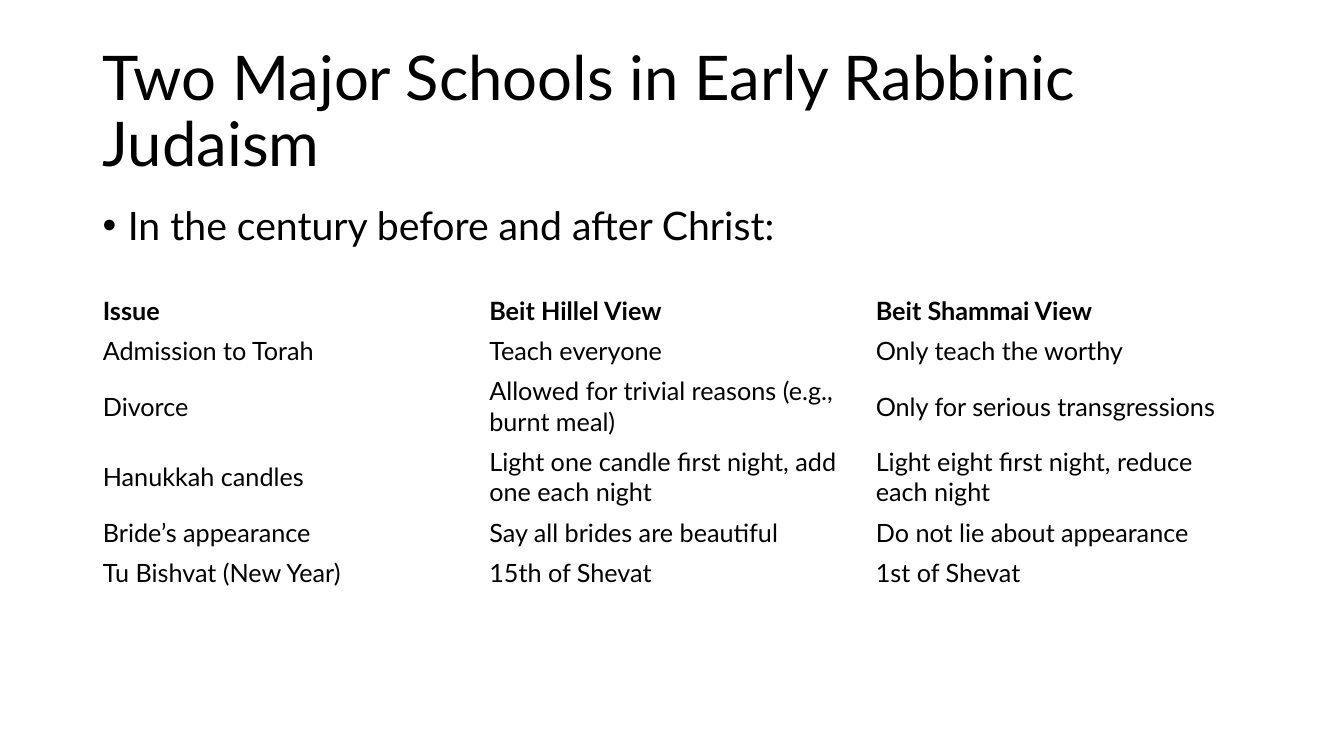
from lxml.etree import SubElement
from pptx import Presentation
from pptx.dml.color import RGBColor
from pptx.enum.text import MSO_ANCHOR
from pptx.oxml.ns import qn
from pptx.util import Inches, Pt

TITLE = "Two Major Schools in Early Rabbinic Judaism"
INTRO = "In the century before and after Christ:"
VIEWS = [
    ("Issue", "Beit Hillel View", "Beit Shammai View"),
    ("Admission to Torah", "Teach everyone", "Only teach the worthy"),
    ("Divorce", "Allowed for trivial reasons (e.g., burnt meal)",
     "Only for serious transgressions"),
    ("Hanukkah candles", "Light one candle first night, add one each night",
     "Light eight first night, reduce each night"),
    ("Bride’s appearance", "Say all brides are beautiful",
     "Do not lie about appearance"),
    ("Tu Bishvat (New Year)", "15th of Shevat", "1st of Shevat"),
]
ROW_HEIGHTS = [0.4, 0.4, 0.7, 0.7, 0.4, 0.4]
FONT, INK, PAPER = "Lato", "000000", "FFFFFF"
LEFT, WIDTH = 0.92, 11.5


def color(hex_code):
    return RGBColor.from_string(hex_code)


def style(paragraph, size, bold=False):
    font = paragraph.font
    font.name, font.size, font.bold = FONT, Pt(size), bold
    font.color.rgb = color(INK)


def add_text(slide, text, top, size, anchor):
    """Add a full-width text box and return its only paragraph."""
    box = slide.shapes.add_textbox(
        Inches(LEFT), Inches(top), Inches(WIDTH), Inches(1.45))
    frame = box.text_frame
    frame.word_wrap = True
    frame.vertical_anchor = anchor
    paragraph = frame.paragraphs[0]
    paragraph.text = text
    paragraph.line_spacing = 0.9
    style(paragraph, size)
    return paragraph


def add_bullet(paragraph, indent):
    properties = paragraph._p.get_or_add_pPr()
    properties.set("marL", str(Inches(indent)))
    properties.set("indent", str(-Inches(indent)))
    SubElement(properties, qn("a:buFont")).set("typeface", "Arial")
    SubElement(properties, qn("a:buChar")).set("char", "•")


def add_views(slide):
    table = slide.shapes.add_table(
        len(VIEWS), len(VIEWS[0]), Inches(LEFT), Inches(2.88),
        Inches(WIDTH), Inches(sum(ROW_HEIGHTS))).table
    table.horz_banding = False
    for row, height, texts in zip(table.rows, ROW_HEIGHTS, VIEWS):
        row.height = Inches(height)
        for cell, text in zip(row.cells, texts):
            cell.text = text
            cell.vertical_anchor = MSO_ANCHOR.MIDDLE
            cell.fill.background()
            style(cell.text_frame.paragraphs[0], 18, bold=texts is VIEWS[0])


def main():
    deck = Presentation()
    deck.slide_width, deck.slide_height = Inches(13.33), Inches(7.5)
    slide = deck.slides.add_slide(deck.slide_layouts[6])
    slide.background.fill.solid()
    slide.background.fill.fore_color.rgb = color(PAPER)

    add_text(slide, TITLE, 0.4, 44, MSO_ANCHOR.MIDDLE)
    intro = add_text(slide, INTRO, 2, 28, MSO_ANCHOR.TOP)
    intro.space_before = Pt(10)
    add_bullet(intro, 0.25)
    add_views(slide)
    deck.save("out.pptx")


if __name__ == "__main__":
    main()
